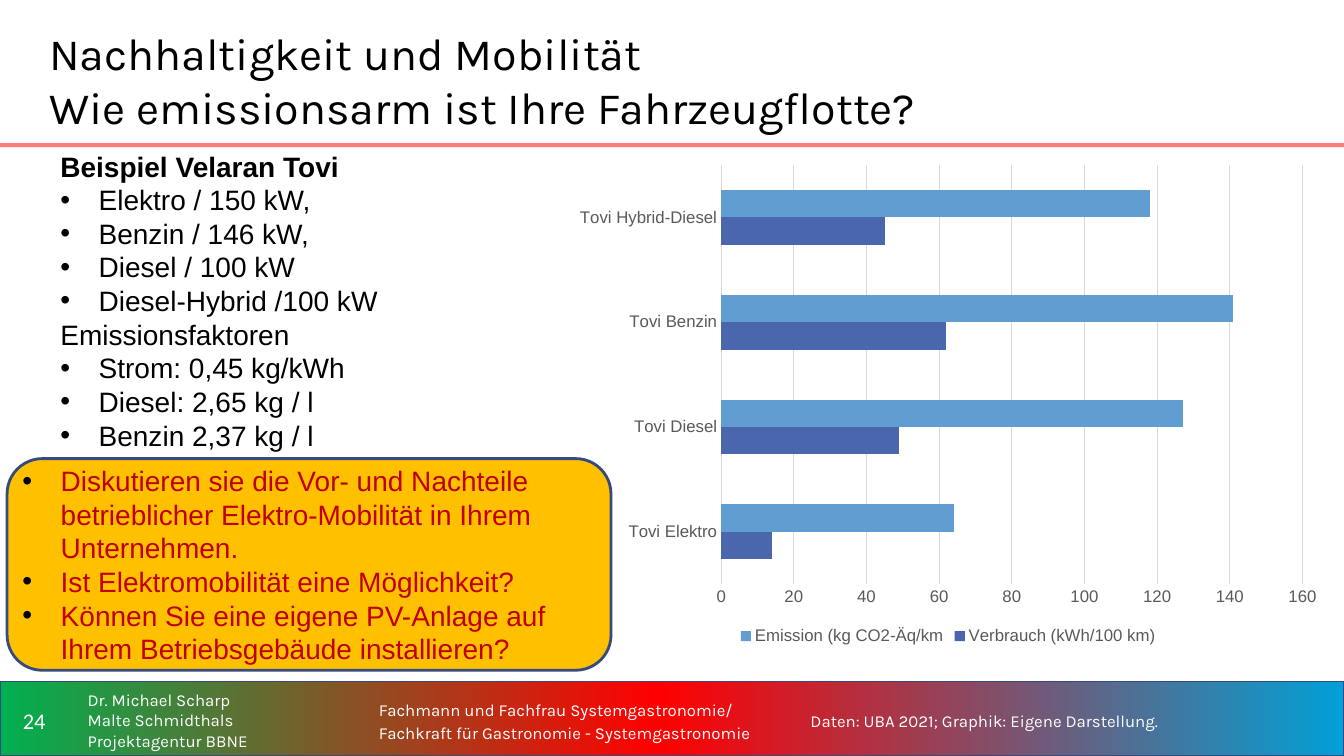
from copy import deepcopy
from lxml.etree import SubElement
from pptx import Presentation
from pptx.chart.data import CategoryChartData
from pptx.dml.color import RGBColor
from pptx.enum.chart import XL_CHART_TYPE, XL_LEGEND_POSITION, XL_TICK_MARK
from pptx.enum.shapes import MSO_SHAPE
from pptx.enum.text import MSO_ANCHOR, PP_ALIGN
from pptx.oxml.ns import qn
from pptx.util import Inches, Pt

BLACK = RGBColor(0x00, 0x00, 0x00)
WHITE = RGBColor(0xFF, 0xFF, 0xFF)
RED = RGBColor(0xC0, 0x00, 0x00)
CORAL = RGBColor(0xFF, 0x7E, 0x79)
AMBER = RGBColor(0xFF, 0xC0, 0x00)
NAVY = RGBColor(0x36, 0x4A, 0x7D)
GREY = RGBColor(0x59, 0x59, 0x59)
GRID = RGBColor(0xD9, 0xD9, 0xD9)
FOOTER_STOPS = [
    (0, RGBColor(0x00, 0xB0, 0x50)),
    (0.49, RGBColor(0xFF, 0x00, 0x00)),
    (1, RGBColor(0x01, 0xA0, 0xD6)),
]

TITLE = ["Nachhaltigkeit und Mobilität\vWie emissionsarm ist Ihre Fahrzeugflotte?"]
FACTS = [
    ("Beispiel Velaran Tovi", ["Elektro / 150 kW,", "Benzin / 146 kW,", "Diesel / 100 kW", "Diesel-Hybrid /100 kW"]),
    ("Emissionsfaktoren", ["Strom: 0,45 kg/kWh", "Diesel: 2,65 kg / l", "Benzin 2,37 kg / l"]),
]
QUESTIONS = [
    "Diskutieren sie die Vor- und Nachteile betrieblicher Elektro-Mobilität in Ihrem Unternehmen.",
    "Ist Elektromobilität eine Möglichkeit?",
    "Können Sie eine eigene PV-Anlage auf Ihrem Betriebsgebäude installieren?",
]
FOOTER = [
    (0, 0.68, ["24"], dict(size=16, font="Calibri", align=PP_ALIGN.CENTER)),
    (0.77, 2.78, ["Dr. Michael Scharp", "Malte Schmidthals", "Projektagentur BBNE"], {}),
    (3.66, 4.19, ["Fachmann und Fachfrau Systemgastronomie/ Fachkraft für Gastronomie - Systemgastronomie"],
     dict(spacing=1.1, pad=(0.1, 0))),
    (7.94, 5.05, ["Daten: UBA 2021; Graphik: Eigene Darstellung."], dict(spacing=1.1)),
]
CARS = ["Tovi Elektro", "Tovi Diesel", "Tovi Benzin", "Tovi Hybrid-Diesel"]
SERIES = [
    ("Verbrauch (kWh/100 km)", [14, 49, 62, 45], RGBColor(0x4A, 0x66, 0xAC)),
    ("Emission (kg CO2-Äq/km", [64, 127, 141, 118], RGBColor(0x62, 0x9D, 0xD1)),
]

W, H = 13.33, 7.5
BAR_TOP = 6.76

prs = Presentation()
prs.slide_width, prs.slide_height = Inches(W), Inches(H)
s = prs.slides.add_slide(prs.slide_layouts[6])


def box(*at):
    return [Inches(v) for v in at]


def shape(kind, at, fill=None, line=None, width=1):
    sp = s.shapes.add_shape(kind, *box(*at))
    sp.shadow.inherit = False
    if fill is not None:
        sp.fill.solid()
        sp.fill.fore_color.rgb = fill
    if line is None:
        sp.line.fill.background()
    else:
        sp.line.color.rgb = line
        sp.line.width = Pt(width)
    return sp


def add_bullet(p):
    pPr = p._p.get_or_add_pPr()
    pPr.set("marL", str(Inches(0.38)))
    pPr.set("indent", str(-Inches(0.38)))
    clr = SubElement(pPr, qn("a:buClr"))
    SubElement(clr, qn("a:srgbClr")).set("val", str(BLACK))
    SubElement(pPr, qn("a:buFont")).set("typeface", "Arial")
    SubElement(pPr, qn("a:buChar")).set("char", "•")


def write(sp, lines, size=20, font="Arial", color=BLACK, bold=(), bullets=(), align=PP_ALIGN.LEFT,
          spacing=None, pad=(0.1, 0.05), anchor=MSO_ANCHOR.MIDDLE):
    tf = sp.text_frame
    tf.word_wrap = True
    tf.vertical_anchor = anchor
    tf.margin_left = tf.margin_right = Inches(pad[0])
    tf.margin_top = tf.margin_bottom = Inches(pad[1])
    for i, line in enumerate(lines):
        p = tf.add_paragraph() if i else tf.paragraphs[0]
        if line in bullets:
            add_bullet(p)
        p.text = line
        p.alignment = align
        if spacing:
            p.line_spacing = spacing
        for r in p.runs:
            r.font.size = Pt(size)
            r.font.name = font
            r.font.color.rgb = color
            r.font.bold = line in bold


def text(at, lines, **fmt):
    write(s.shapes.add_textbox(*box(*at)), lines, **fmt)


def style(font):
    font.size, font.name, font.color.rgb = Pt(12), "Arial", GREY


bar = shape(MSO_SHAPE.RECTANGLE, (0, BAR_TOP, W, H - BAR_TOP), line=NAVY)
bar.fill.gradient()
bar.fill.gradient_angle = 0
stops = bar._element.spPr.find(qn("a:gradFill")).find(qn("a:gsLst"))
stops.append(deepcopy(stops[0]))
for stop, (position, color) in zip(bar.fill.gradient_stops, FOOTER_STOPS):
    stop.position = position
    stop.color.rgb = color
shape(MSO_SHAPE.RECTANGLE, (0, 1.42, W, 0.04), fill=CORAL)

for left, width, lines, fmt in FOOTER:
    text((left, 6.84, width, 0.61), lines, **{"size": 12, "font": "Karla", "color": WHITE, **fmt})

text((0.39, 0.2, 9.84, 1.18), TITLE, size=32, font="Karla", pad=(0.1, 0.1))
facts = [line for head, items in FACTS for line in (head, *items)]
points = [item for head, items in FACTS for item in items]
text((0.5, 1.43, 6.42, 5.09), facts, bold=facts[:1], bullets=points, anchor=MSO_ANCHOR.TOP)

data = CategoryChartData()
data.categories = CARS
for name, values, color in SERIES:
    data.add_series(name, values)
chart = s.shapes.add_chart(XL_CHART_TYPE.BAR_CLUSTERED, *box(5.6, 1.54, 7.61, 4.9), data).chart
style(chart.font)
chart.has_title = False
chart.has_legend = True
chart.legend.position = XL_LEGEND_POSITION.BOTTOM
chart.legend.include_in_layout = False
style(chart.legend.font)
plot = chart.plots[0]
plot.gap_width, plot.overlap, plot.vary_by_categories = 182, 0, False
for series, (name, values, color) in zip(plot.series, SERIES):
    series.format.fill.solid()
    series.format.fill.fore_color.rgb = color
cats, vals = chart.category_axis, chart.value_axis
for axis in (cats, vals):
    axis.major_tick_mark = axis.minor_tick_mark = XL_TICK_MARK.NONE
    style(axis.tick_labels.font)
vals.minimum_scale, vals.maximum_scale, vals.major_unit = 0, 160, 20
vals.format.line.fill.background()
for line in (cats.format.line, vals.major_gridlines.format.line):
    line.color.rgb = GRID
    line.width = Pt(0.75)

panel = shape(MSO_SHAPE.ROUNDED_RECTANGLE, (0.07, 4.55, 5.99, 2.1), AMBER, NAVY, 2)
write(panel, QUESTIONS, color=RED, bullets=QUESTIONS, pad=(0.05, 0.05))

prs.save("out.pptx")
